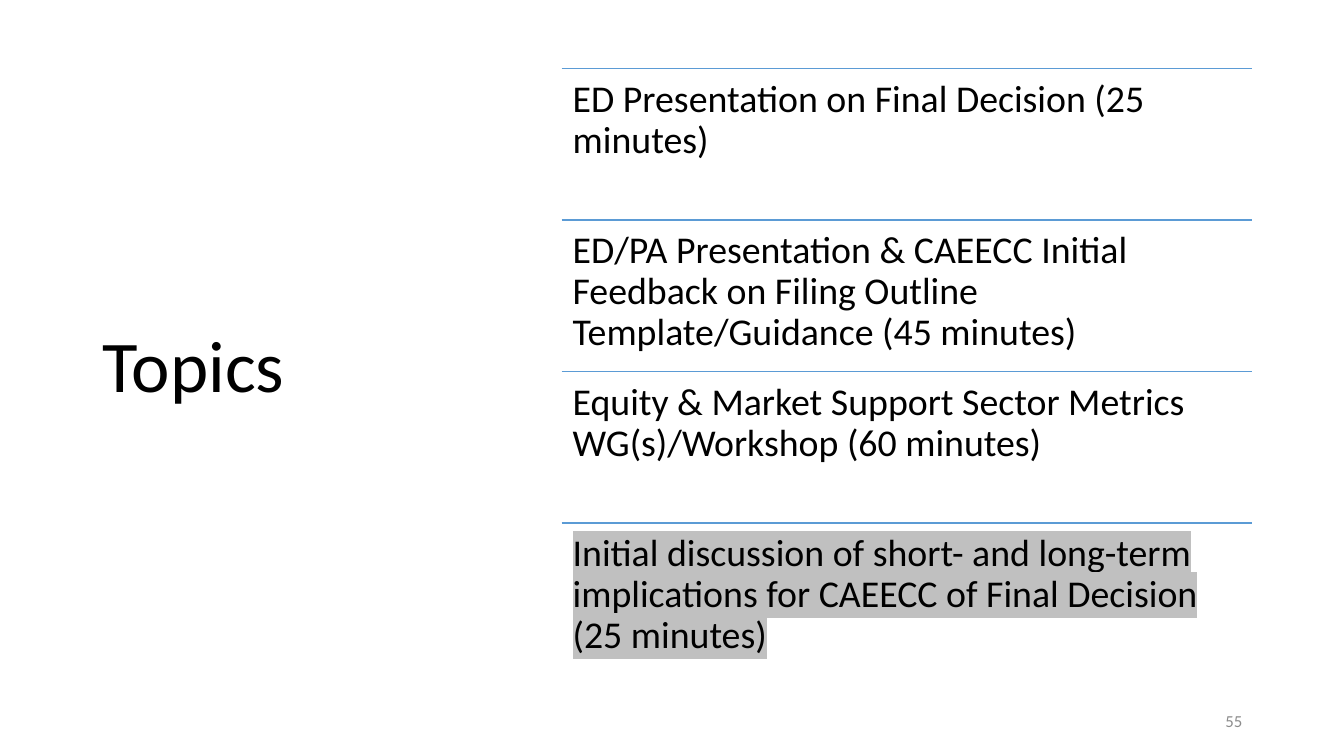
from lxml import etree
from pptx import Presentation
from pptx.dml.color import RGBColor
from pptx.enum.shapes import MSO_CONNECTOR
from pptx.enum.text import MSO_ANCHOR, MSO_AUTO_SIZE, PP_ALIGN
from pptx.oxml.ns import qn
from pptx.util import Inches, Pt

LEFT, RIGHT = PP_ALIGN.LEFT, PP_ALIGN.RIGHT
TOP, MIDDLE = MSO_ANCHOR.TOP, MSO_ANCHOR.MIDDLE
NO_AUTOFIT = MSO_AUTO_SIZE.NONE
STRAIGHT = MSO_CONNECTOR.STRAIGHT

TITLE = "Topics"
SLIDE_NUMBER = "55"
# Agenda item, highlighted or not
TOPICS = [
    ("ED Presentation on Final Decision (25 minutes)", False),
    ("ED/PA Presentation & CAEECC Initial Feedback on Filing Outline "
     "Template/Guidance (45 minutes)", False),
    ("Equity & Market Support Sector Metrics WG(s)/Workshop (60 minutes)", False),
    ("Initial discussion of short- and long-term implications for CAEECC "
     "of Final Decision (25 minutes)", True),
]

FONT = "Calibri"
COLORS = {"text": "000000", "rule": "5B9BD5", "number": "8C8C8C", "highlight": "C0C0C0"}

LIST_LEFT, LIST_WIDTH = 5.57, 6.85
FIRST_RULE, LAST_RULE = 0.68, 5.19
ROW_HEIGHT = (LAST_RULE - FIRST_RULE) / (len(TOPICS) - 1)


def write(shape, text, size, color, align=LEFT, anchor=TOP, spacing=None):
    """Fill a shape with one formatted run and return that run."""
    frame = shape.text_frame
    frame.word_wrap = True
    frame.auto_size = NO_AUTOFIT
    frame.vertical_anchor = anchor
    paragraph = frame.paragraphs[0]
    paragraph.alignment = align
    paragraph.line_spacing = spacing
    run = paragraph.add_run()
    run.text = text
    run.font.size = Pt(size)
    run.font.color.rgb = RGBColor.from_string(COLORS[color])
    run.font.name = FONT
    return run


def highlight(run):
    properties = run.font._element
    marker = etree.Element(qn("a:highlight"))
    etree.SubElement(marker, qn("a:srgbClr"), val=COLORS["highlight"])
    properties.find(qn("a:latin")).addprevious(marker)


def add_rule(slide, top):
    rule = slide.shapes.add_connector(
        STRAIGHT, Inches(LIST_LEFT), Inches(top),
        Inches(LIST_LEFT + LIST_WIDTH), Inches(top))
    rule.line.color.rgb = RGBColor.from_string(COLORS["rule"])
    rule.line.width = Pt(1)
    etree.SubElement(rule._element.spPr, qn("a:effectLst"))


def add_topic(slide, top, text, highlighted):
    add_rule(slide, top)
    box = slide.shapes.add_textbox(
        Inches(LIST_LEFT), Inches(top), Inches(LIST_WIDTH), Inches(ROW_HEIGHT))
    frame = box.text_frame
    frame.margin_left = frame.margin_right = Inches(0.11)
    frame.margin_top = frame.margin_bottom = Inches(0.11)
    run = write(box, text, 27, "text", spacing=0.9)
    if highlighted:
        highlight(run)


def main():
    presentation = Presentation()
    presentation.slide_width = Inches(13.33)
    presentation.slide_height = Inches(7.5)
    slide = presentation.slides.add_slide(presentation.slide_layouts[5])

    title = slide.shapes.title
    title.left, title.top = Inches(0.92), Inches(0.61)
    title.width, title.height = Inches(3.69), Inches(6.09)
    write(title, TITLE, 52, "text", anchor=MIDDLE, spacing=0.9)

    for row, (text, highlighted) in enumerate(TOPICS):
        add_topic(slide, FIRST_RULE + row * ROW_HEIGHT, text, highlighted)

    number = slide.shapes.add_textbox(Inches(9.42), Inches(6.95), Inches(3), Inches(0.4))
    write(number, SLIDE_NUMBER, 12, "number", align=RIGHT, anchor=MIDDLE)

    presentation.save("out.pptx")


if __name__ == "__main__":
    main()
